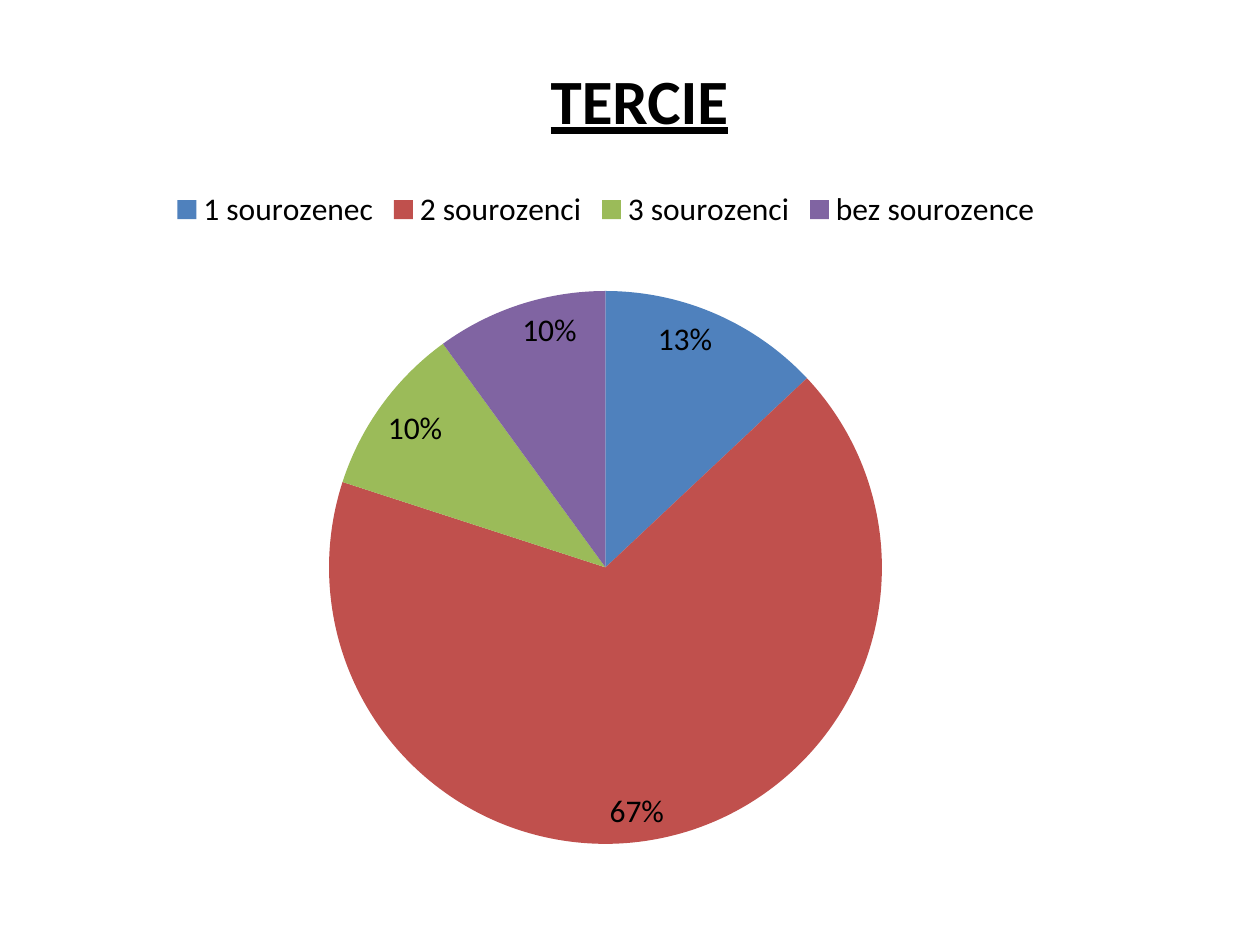
from lxml.etree import SubElement
from pptx import Presentation
from pptx.chart.data import CategoryChartData
from pptx.dml.color import RGBColor
from pptx.enum.chart import XL_CHART_TYPE, XL_LABEL_POSITION, XL_LEGEND_POSITION
from pptx.enum.text import MSO_ANCHOR, PP_ALIGN
from pptx.oxml.ns import qn
from pptx.util import Emu, Pt

PX = 914400 // 126
FONT = "Calibri"
BLACK = RGBColor(0x00, 0x00, 0x00)
BLUE = RGBColor(0x4F, 0x81, 0xBD)
RED = RGBColor(0xC0, 0x50, 0x4D)
GREEN = RGBColor(0x9B, 0xBB, 0x59)
PURPLE = RGBColor(0x80, 0x64, 0xA2)

# Category, share in percent, slice colour
SLICES = [
    ("1 sourozenec", 13, BLUE),
    ("2 sourozenci", 67, RED),
    ("3 sourozenci", 10, GREEN),
    ("bez sourozence", 10, PURPLE),
]


def scale(*box):
    return [Emu(n * PX) for n in box]


def style(font, size):
    font.name = FONT
    font.size = Pt(size)
    font.color.rgb = BLACK


def add_title(slide, box, text):
    frame = slide.shapes.add_textbox(*scale(*box)).text_frame
    frame.word_wrap = True
    frame.vertical_anchor = MSO_ANCHOR.TOP
    para = frame.paragraphs[0]
    para.alignment = PP_ALIGN.CENTER
    run = para.add_run()
    run.text = text
    style(run.font, 36)
    run.font.bold = True
    run.font.underline = True


def place_plot(chart, box, pie):
    """Fix the pie's box, in px from the chart's corner."""
    plot = chart._chartSpace.chart.plotArea
    for old in plot.findall(qn("c:layout")):
        plot.remove(old)
    layout = SubElement(plot, qn("c:layout"))
    plot.insert(0, layout)
    manual = SubElement(layout, qn("c:manualLayout"))
    parts = [("layoutTarget", "inner"), ("xMode", "edge"), ("yMode", "edge")]
    sizes = box[2:] * 2
    parts += [(tag, f"{n / size:.4f}") for tag, n, size in zip("xywh", pie, sizes)]
    for tag, val in parts:
        SubElement(manual, qn("c:" + tag)).set("val", val)


def add_pie(slide, box, pie):
    data = CategoryChartData()
    data.categories = [name for name, _, _ in SLICES]
    data.add_series("Series 1", [share for _, share, _ in SLICES])
    chart = slide.shapes.add_chart(XL_CHART_TYPE.PIE, *scale(*box), data).chart
    chart.has_title = False
    style(chart.font, 18)

    # Legend
    chart.has_legend = True
    chart.legend.position = XL_LEGEND_POSITION.TOP
    chart.legend.include_in_layout = False

    # Slices
    plot = chart.plots[0]
    plot.vary_by_categories = True
    for i, (_, _, color) in enumerate(SLICES):
        fill = plot.series[0].points[i].format.fill
        fill.solid()
        fill.fore_color.rgb = color

    # Labels
    labels = plot.series[0].data_labels
    labels.show_percentage = True
    labels.show_value = False
    labels.number_format = "0%"
    labels.number_format_is_linked = False
    labels.position = XL_LABEL_POSITION.INSIDE_END
    style(labels.font, 18)
    place_plot(chart, box, pie)


def main():
    deck = Presentation()
    deck.slide_width, deck.slide_height = scale(1260, 945)
    slide = deck.slides.add_slide(deck.slide_layouts[6])
    add_pie(slide, (95, 175, 1022, 687), (234, 116, 553, 553))
    add_title(slide, (54, 55, 1171, 89), "TERCIE")
    deck.save("out.pptx")


if __name__ == "__main__":
    main()
